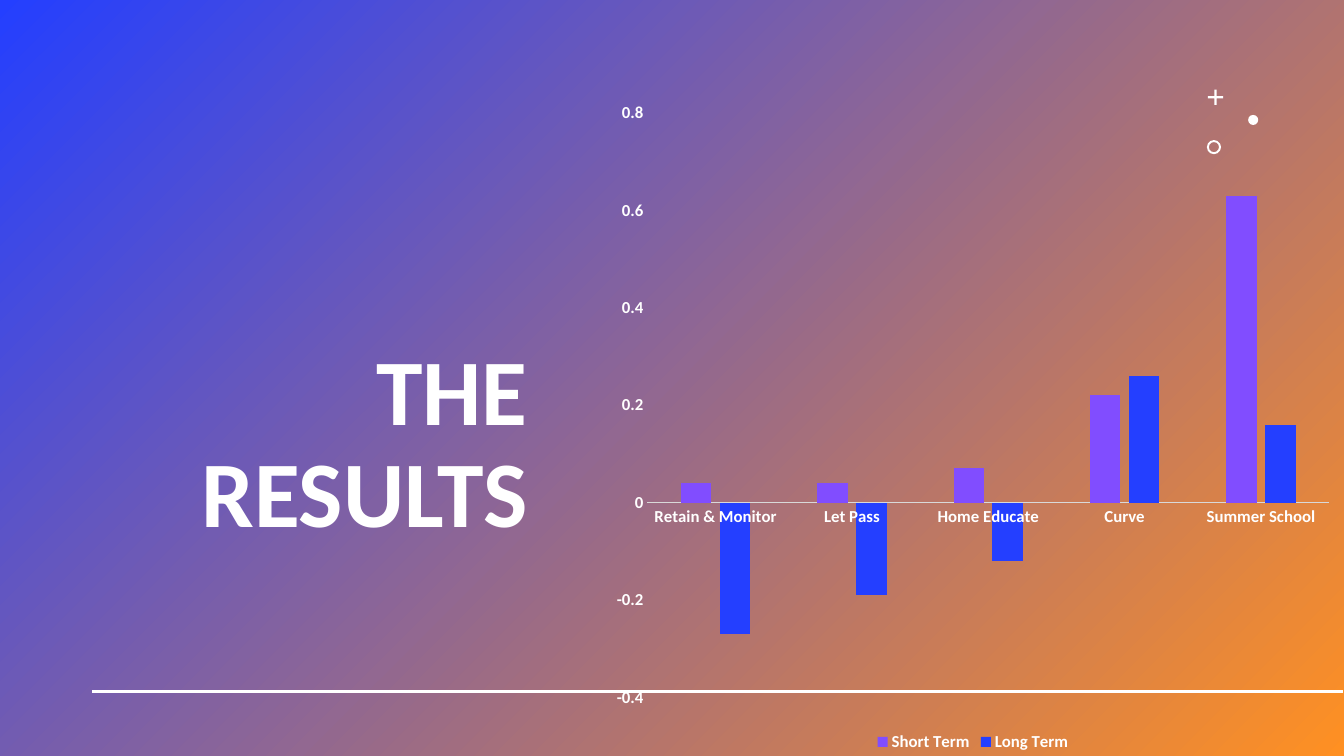
from lxml.etree import SubElement
from pptx import Presentation
from pptx.chart.data import CategoryChartData as Data
from pptx.dml.color import RGBColor as RGB
from pptx.enum.chart import XL_CHART_TYPE as Kind, XL_LEGEND_POSITION as Spot, XL_TICK_MARK as Tick
from pptx.enum.shapes import MSO_CONNECTOR as Link, MSO_SHAPE as Form
from pptx.enum.text import MSO_ANCHOR as Anchor, PP_ALIGN as Align
from pptx.oxml.ns import qn
from pptx.util import Inches, Pt

WIDE, HIGH = Inches(13.33), Inches(7.5)
FONT = "Calibri"
HUES = {"blue": "243FFF", "orange": "FF9022", "purple": "814DFF", "white": "FFFFFF", "axis": "D9D9D9"}
CATS = ["Retain & Monitor", "Let Pass", "Home Educate", "Curve", "Summer School"]
TERMS = [
    ("Short Term", "purple", [0.04, 0.04, 0.07, 0.22, 0.63]),
    ("Long Term", "blue", [-0.27, -0.19, -0.12, 0.26, 0.16]),
]
MARKS = [
    (Form.CROSS, (89.87, 11.87, 1.13, 2), 0.43),
    (Form.OVAL, (92.87, 15.2, 0.75, 1.33), None),
    (Form.DONUT, (89.8, 18.53, 1.05, 1.87), 0.14),
]


def hue(name):
    return RGB.from_string(HUES[name])


def place(*box):
    """Turn percentages of the slide's width and height into lengths."""
    return [int(part * side / 100) for part, side in zip(box, (WIDE, HIGH) * 2)]


def style(font, size):
    font.name, font.size, font.bold = FONT, Pt(size), True
    font.color.rgb = hue("white")


def add_form(slide, form, box):
    shape = slide.shapes.add_shape(form, *place(*box))
    shape.shadow.inherit = False
    shape.line.fill.background()
    return shape


def add_back(slide):
    fill = add_form(slide, Form.RECTANGLE, (0, 0, 100, 100)).fill
    fill.gradient()
    fill.gradient_angle = 315
    for stop, spot, name in zip(fill.gradient_stops, (0, 1), ("blue", "orange")):
        stop.position = spot
        stop.color.rgb = hue(name)


def add_title(slide, text, box):
    frame = slide.shapes.add_textbox(*place(*box)).text_frame
    frame.word_wrap = True
    frame.vertical_anchor = Anchor.BOTTOM
    para = frame.paragraphs[0]
    para.text, para.alignment, para.line_spacing = text, Align.RIGHT, 0.9
    style(para.font, 67)


def add_mark(slide, form, box, adjust):
    mark = add_form(slide, form, box)
    mark.fill.solid()
    mark.fill.fore_color.rgb = hue("white")
    if adjust:
        mark.adjustments[0] = adjust


def add_rule(slide, ends):
    rule = slide.shapes.add_connector(Link.STRAIGHT, *place(*ends))
    rule.line.width = Pt(2)
    rule.line.color.rgb = hue("white")
    SubElement(rule.element.spPr, qn("a:effectLst"))


def add_graph(slide, box):
    data = Data()
    data.categories = CATS
    for name, _, vals in TERMS:
        data.add_series(name, vals)
    chart = slide.shapes.add_chart(Kind.COLUMN_CLUSTERED, *place(*box), data).chart
    chart.has_title = False
    style(chart.font, 12)
    chart.has_legend = True
    chart.legend.position = Spot.BOTTOM
    chart.legend.include_in_layout = False
    style(chart.legend.font, 12)
    plot = chart.plots[0]
    plot.gap_width, plot.overlap, plot.vary_by_categories = 219, -27, False
    for term, (_, name, _) in zip(plot.series, TERMS):
        term.invert_if_negative = False
        term.format.fill.solid()
        term.format.fill.fore_color.rgb = hue(name)
    cat, val = chart.category_axis, chart.value_axis
    for axis in (cat, val):
        axis.has_major_gridlines = False
        axis.major_tick_mark = axis.minor_tick_mark = Tick.NONE
        style(axis.tick_labels.font, 12)
    cat.format.line.width = Pt(0.75)
    cat.format.line.color.rgb = hue("axis")
    val.format.line.fill.background()
    val.minimum_scale, val.maximum_scale, val.major_unit = -0.4, 0.8, 0.2


def main():
    deck = Presentation()
    deck.slide_width, deck.slide_height = WIDE, HIGH
    slide = deck.slides.add_slide(deck.slide_layouts[6])
    add_back(slide)
    add_title(slide, "THE RESULTS", (6.53, 20.13, 33.46, 52.93))
    for mark in MARKS:
        add_mark(slide, *mark)
    add_rule(slide, (99.93, 91.47, 6.83, 91.47))
    add_graph(slide, (44.79, 11.87, 55.21, 88.13))
    deck.save("out.pptx")


if __name__ == "__main__":
    main()
